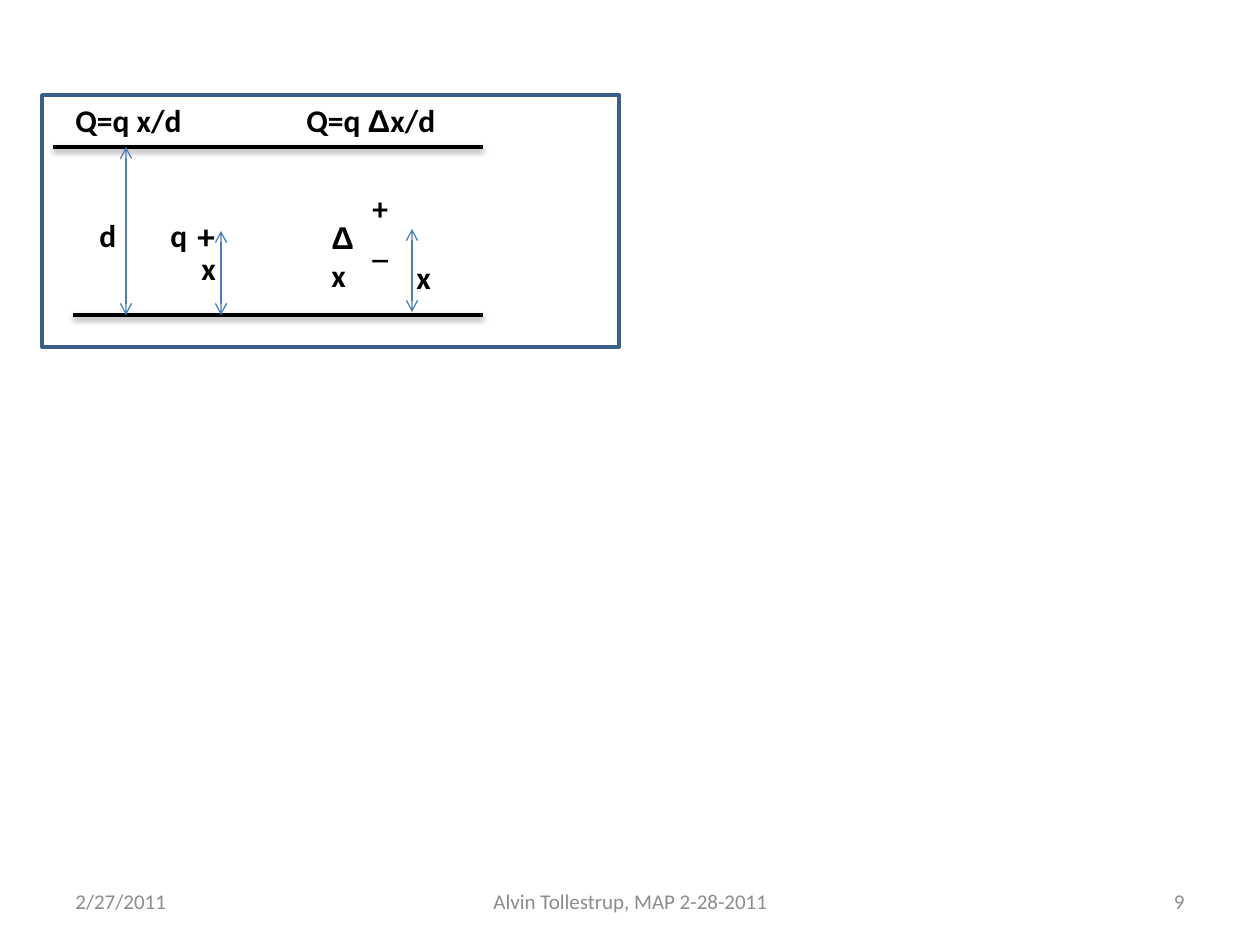
"""Build the slide with the charge between two plates."""
from lxml.etree import SubElement
from pptx import Presentation
from pptx.dml.color import RGBColor
from pptx.enum.shapes import MSO_CONNECTOR, MSO_SHAPE
from pptx.enum.text import MSO_ANCHOR, PP_ALIGN
from pptx.oxml.ns import qn
from pptx.util import Emu, Pt

PX = 914400 / 126
COLORS = {"ink": "000000", "arrow": "4B7EBC", "frame": "3A5F8C", "footer": "8C8C8C"}

FRAME = (42, 95, 577, 252)
PLATES = [(53, 147, 483, 147), (73, 315, 483, 315)]
DISTANCES = [(412, 229, 412, 312), (126, 147, 126, 315), (221, 231, 221, 315)]
LABELS = [
    ("Q=q x/d", (63, 95, 158, 50), 18),
    ("Q=q Δx/d", (294, 95, 193, 50), 18),
    ("d", (87, 210, 43, 50), 18),
    ("q", (158, 210, 42, 50), 18),
    ("+", (185, 208, 63, 55), 20),
    ("x", (189, 243, 53, 50), 18),
    ("Δx", (319, 212, 59, 50), 18),
    ("+\n_", (360, 183, 42, 89), 18),
    ("x", (404, 252, 41, 50), 18),
]
FOOTERS = [
    ("2/27/2011", (63, 876, 294, 50), PP_ALIGN.LEFT),
    ("Alvin Tollestrup, MAP 2-28-2011", (431, 876, 399, 50), PP_ALIGN.CENTER),
    ("9", (903, 876, 294, 50), PP_ALIGN.RIGHT),
]


def scaled(lengths):
    return [Emu(round(length * PX)) for length in lengths]


def color(name):
    return RGBColor.from_string(COLORS[name])


def add_text(page, text, place, size, ink, align=PP_ALIGN.LEFT, bold=True, anchor=MSO_ANCHOR.TOP):
    frame = page.shapes.add_textbox(*scaled(place)).text_frame
    frame.word_wrap = True
    frame.vertical_anchor = anchor
    for index, line in enumerate(text.split("\n")):
        para = frame.add_paragraph() if index else frame.paragraphs[0]
        para.alignment = align
        para.font.name = "Calibri"
        para.font.size = Pt(size)
        para.font.bold = bold
        para.font.color.rgb = color(ink)
        before, delta, after = line.partition("Δ")
        for part in filter(None, (before, delta, after)):
            span = para.add_run()
            span.text = part
            if part == "Δ":
                span.font.name = "Arial"


def add_line(page, ends, ink, width):
    line = page.shapes.add_connector(MSO_CONNECTOR.STRAIGHT, *scaled(ends))
    line.line.color.rgb = color(ink)
    line.line.width = Pt(width)
    return line, SubElement(line._element.spPr, qn("a:effectLst"))


def add_plate(page, ends):
    effects = add_line(page, ends, "ink", 2)[1]
    shadow = SubElement(effects, qn("a:outerShdw"), blurRad="40000", dist="20000",
                        dir="5400000", rotWithShape="0")
    shade = SubElement(shadow, qn("a:srgbClr"), val=COLORS["ink"])
    SubElement(shade, qn("a:alpha"), val="38000")


def add_distance(page, ends):
    outline = add_line(page, ends, "arrow", 0.75)[0].line._get_or_add_ln()
    for end in ("a:headEnd", "a:tailEnd"):
        SubElement(outline, qn(end), type="arrow")


def main():
    deck = Presentation()
    deck.slide_width, deck.slide_height = scaled((1260, 945))
    page = deck.slides.add_slide(deck.slide_layouts[6])
    for text, place, align in FOOTERS:
        add_text(page, text, place, 12, "footer", align, False, MSO_ANCHOR.MIDDLE)
    for ends in PLATES:
        add_plate(page, ends)
    for ends in DISTANCES:
        add_distance(page, ends)
    for text, place, size in LABELS:
        add_text(page, text, place, size, "ink")
    box = page.shapes.add_shape(MSO_SHAPE.RECTANGLE, *scaled(FRAME))
    box.shadow.inherit = False
    box.fill.background()
    box.line.color.rgb = color("frame")
    box.line.width = Pt(2)
    deck.save("out.pptx")


if __name__ == "__main__":
    main()
